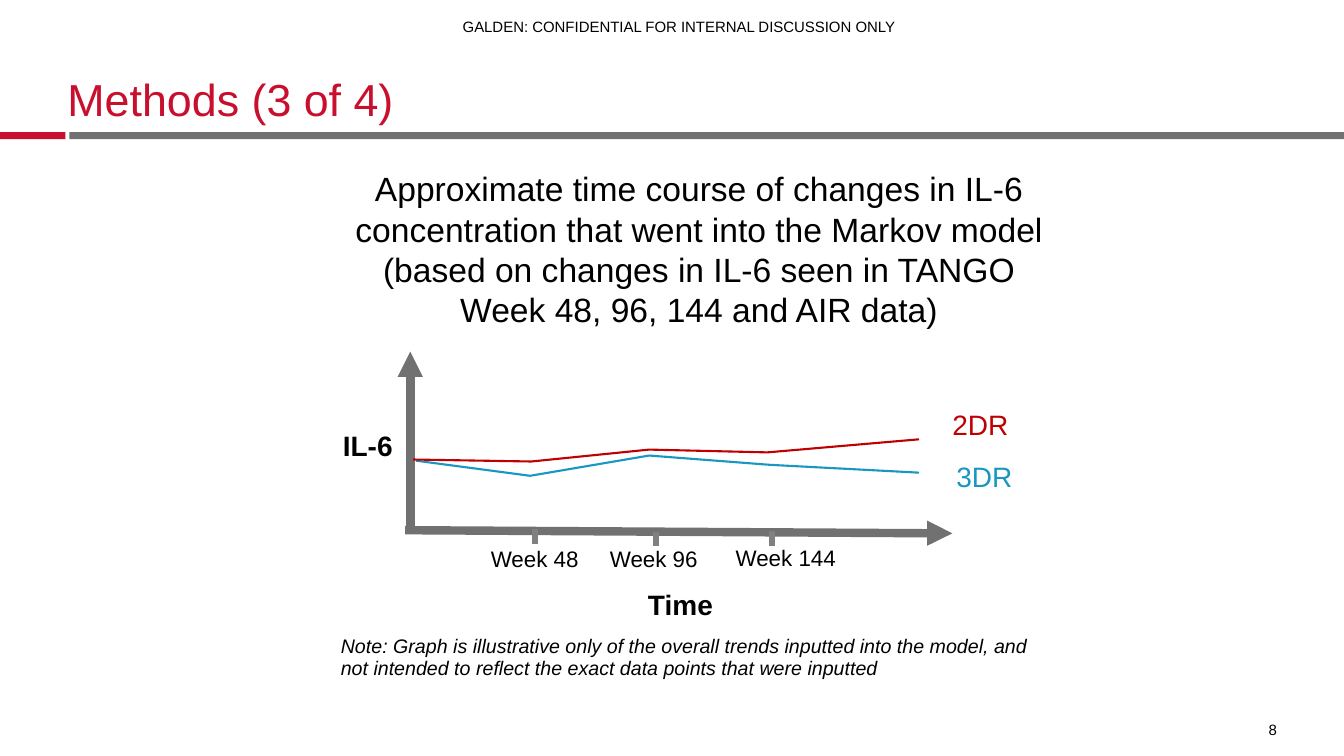
from lxml.etree import SubElement
from pptx import Presentation
from pptx.dml.color import RGBColor
from pptx.enum.shapes import MSO_CONNECTOR, MSO_SHAPE
from pptx.enum.text import MSO_ANCHOR, PP_ALIGN
from pptx.oxml.ns import qn
from pptx.util import Cm, Pt

BLACK = RGBColor(0x00, 0x00, 0x00)
CRIMSON = RGBColor(0xC8, 0x0F, 0x2E)
GREY = RGBColor(0x71, 0x71, 0x71)
TICK_GREY = RGBColor(0x80, 0x80, 0x80)
RED = RGBColor(0xC0, 0x00, 0x00)
BLUE = RGBColor(0x18, 0x97, 0xC1)

presentation = Presentation()
presentation.slide_width = Cm(33.87)
presentation.slide_height = Cm(19.05)
slide = presentation.slides.add_slide(presentation.slide_layouts[6])


def add_text(text, box, size, color=BLACK, anchor=MSO_ANCHOR.TOP, wrap=True, spacing=0.9):
    frame = slide.shapes.add_textbox(*map(Cm, box)).text_frame
    frame.margin_left = frame.margin_right = frame.margin_top = frame.margin_bottom = 0
    frame.vertical_anchor = anchor
    frame.word_wrap = wrap
    paragraph = frame.paragraphs[0]
    paragraph.text = text
    paragraph.line_spacing = spacing
    paragraph.font.name = "Arial"
    paragraph.font.size = Pt(size)
    paragraph.font.color.rgb = color
    return paragraph


def add_line(start, end, color, width, arrow=False):
    connector = slide.shapes.add_connector(MSO_CONNECTOR.STRAIGHT, *map(Cm, start + end))
    connector.line.color.rgb = color
    connector.line.width = Pt(width)
    if arrow:
        SubElement(connector.line._get_or_add_ln(), qn("a:tailEnd"), type="triangle")
    SubElement(connector._element.spPr, qn("a:effectLst"))


for left, width, color in [(1.75, 32.12, GREY), (0, 1.65, CRIMSON)]:
    bar = slide.shapes.add_shape(MSO_SHAPE.RECTANGLE, Cm(left), Cm(3.33), Cm(width), Cm(0.18))
    bar.shadow.inherit = False
    bar.fill.solid()
    bar.fill.fore_color.rgb = color
    bar.line.fill.background()

add_text("GALDEN: CONFIDENTIAL FOR INTERNAL DISCUSSION ONLY", (11.66, 0.43, 11.28, 0.46), 10.7,
         anchor=MSO_ANCHOR.BOTTOM, spacing=1)
add_text("Methods (3 of 4)", (1.7, 1.3, 30.48, 1.88), 32, CRIMSON, MSO_ANCHOR.BOTTOM)
page_number = add_text("8", (31.27, 18.16, 0.91, 0.46), 10.7, anchor=MSO_ANCHOR.BOTTOM, spacing=1)
page_number.alignment = PP_ALIGN.RIGHT

note = add_text("Note: Graph is illustrative only of the overall trends inputted into the model, "
                "and not intended to reflect the exact data points that were inputted",
                (8.59, 16.05, 17.58, 1.07), 14)
note.font.italic = True

add_line((10.34, 13.34), (10.34, 8.86), GREY, 6, arrow=True)
add_line((10.21, 13.36), (24, 13.44), GREY, 6, arrow=True)
for title, left, top, width in [("Time", 16.33, 14.91, 1.65), ("IL-6", 8.64, 10.9, 1.27)]:
    axis_title = add_text(title, (left, top, width, 0.76), 20, wrap=False)
    axis_title.font.bold = True

weeks = [
    ("Week 48", 12.37, 13.82, 2.24, 13.49, 13.34),
    ("Week 96", 15.37, 13.82, 2.24, 16.54, 13.41),
    ("Week 144", 18.54, 13.79, 2.57, 19.46, 13.39),
]
for week, left, top, width, tick_x, tick_top in weeks:
    add_text(week, (left, top, width, 0.61), 16, wrap=False)
    add_line((tick_x, tick_top), (tick_x, tick_top + 0.36), TICK_GREY, 4.5)

heading = add_text("Approximate time course of changes in IL-6 concentration that went into the "
                   "Markov model (based on changes in IL-6 seen in TANGO Week 48, 96, 144 and AIR data)",
                   (8.79, 4.24, 17.65, 4.11), 24, spacing=1)
heading.alignment = PP_ALIGN.CENTER
heading.space_after = Pt(4)

trends = [
    ("3DR", BLUE, (24.1, 11.68),
     [(10.49, 11.61), (13.36, 11.99), (16.36, 11.48), (19.35, 11.71)], (23.16, 11.91)),
    ("2DR", RED, (24, 10.36),
     [(10.41, 11.58), (13.39, 11.63), (16.36, 11.33), (19.33, 11.4)], (23.16, 11.07)),
]
for regimen, color, label_corner, points, end in trends:
    add_text(regimen, label_corner + (1.42, 0.76), 20, color, wrap=False)
    vertices = [(Cm(x), Cm(y)) for x, y in points]
    builder = slide.shapes.build_freeform(*vertices[0])
    builder.add_line_segments(vertices[1:], close=False)
    curve = builder.convert_to_shape()
    curve.shadow.inherit = False
    curve.fill.background()
    curve.line.color.rgb = color
    curve.line.width = Pt(1.5)
    add_line(points[-1], end, color, 1.5)

presentation.save("out.pptx")
